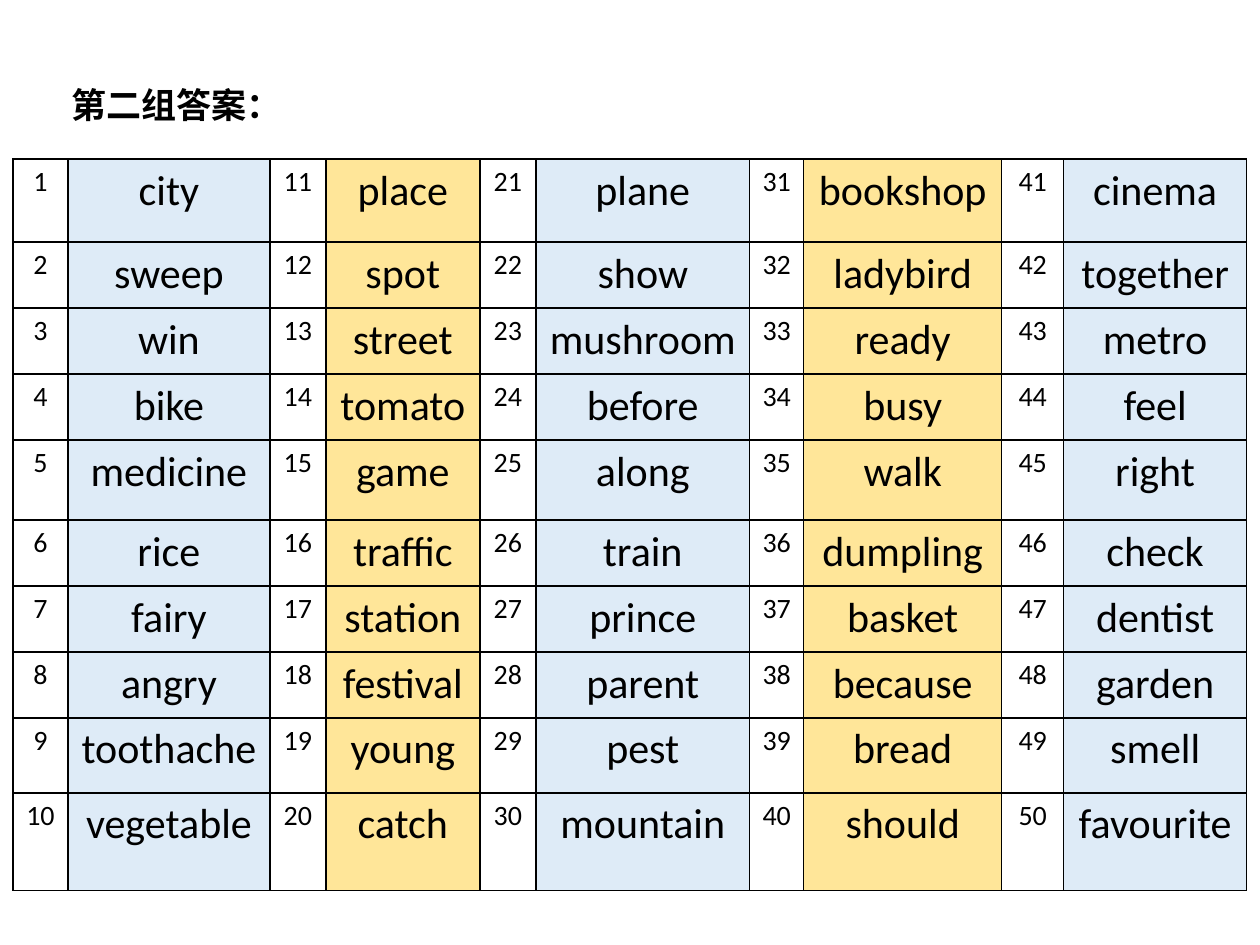
from dataclasses import dataclass

import lxml.etree
import pptx
import pptx.dml.color
import pptx.enum.text
import pptx.oxml.ns
import pptx.util

EMU_PER_PX = 914400 // 126


@dataclass(frozen=True)
class Theme:
    font: str = "Calibri"
    ink: str = "000000"
    blue: str = "DEEBF7"
    yellow: str = "FFE699"
    title_size: int = 20
    number_size: int = 16
    word_size: int = 24
    border_width: int = 1


# Word columns, read downwards; numbering runs through them in order
WORD_COLUMNS = [
    "city sweep win bike medicine rice fairy angry toothache vegetable".split(),
    "place spot street tomato game traffic station festival young catch".split(),
    "plane show mushroom before along train prince parent pest mountain".split(),
    "bookshop ladybird ready busy walk dumpling basket because bread should".split(),
    "cinema together metro feel right check dentist garden smell favourite".split(),
]
COLUMN_WIDTHS = [55, 202, 56, 154, 56, 214, 54, 198, 62, 183]
ROW_HEIGHTS = [83, 66, 66, 66, 80, 66, 66, 66, 75, 98]


def px(length):
    return pptx.util.Emu(length * EMU_PER_PX)


class PageBuilder:
    def __init__(self, page, theme):
        self.page = page
        self.theme = theme

    def color(self, value):
        return pptx.dml.color.RGBColor.from_string(value)

    def format_text(self, para, size, bold=False):
        for span in para.runs:
            span.font.name = self.theme.font
            span.font.size = pptx.util.Pt(size)
            span.font.bold = bold
            span.font.color.rgb = self.color(self.theme.ink)

    def title(self, text, left, top, width, height):
        box = self.page.shapes.add_textbox(px(left), px(top), px(width), px(height))
        frame = box.text_frame
        frame.word_wrap = True
        frame.auto_size = pptx.enum.text.MSO_AUTO_SIZE.SHAPE_TO_FIT_TEXT
        frame.text = text
        self.format_text(frame.paragraphs[0], self.theme.title_size, bold=True)

    def table(self, left, top, widths, heights):
        frame = self.page.shapes.add_table(
            len(heights), len(widths), px(left), px(top), px(sum(widths)), px(sum(heights)))
        table = frame.table
        table.first_row = False
        table.horz_banding = False
        for column, width in zip(table.columns, widths):
            column.width = px(width)
        for row, height in zip(table.rows, heights):
            row.height = px(height)
        return table

    def cell(self, cell, text, size, fill=None):
        cell.text_frame.text = text
        para = cell.text_frame.paragraphs[0]
        para.alignment = pptx.enum.text.PP_ALIGN.CENTER
        self.format_text(para, size)
        if fill:
            cell.fill.solid()
            cell.fill.fore_color.rgb = self.color(fill)
        else:
            cell.fill.background()
        self.borders(cell)

    def borders(self, cell):
        qn = pptx.oxml.ns.qn
        properties = cell._tc.get_or_add_tcPr()
        width = str(pptx.util.Pt(self.theme.border_width))
        # Border lines must come before the fill
        for position, side in enumerate(("a:lnL", "a:lnR", "a:lnT", "a:lnB")):
            line = lxml.etree.Element(qn(side), w=width)
            fill = lxml.etree.SubElement(line, qn("a:solidFill"))
            lxml.etree.SubElement(fill, qn("a:srgbClr"), val=self.theme.ink)
            properties.insert(position, line)


def main():
    deck = pptx.Presentation()
    deck.slide_width = px(1260)
    deck.slide_height = px(945)
    theme = Theme()
    builder = PageBuilder(deck.slides.add_slide(deck.slide_layouts[6]), theme)

    # Answer table: pairs of number and word columns
    table = builder.table(13, 159, COLUMN_WIDTHS, ROW_HEIGHTS)
    for group, words in enumerate(WORD_COLUMNS):
        fill = theme.yellow if group % 2 else theme.blue
        for row, word in enumerate(words):
            number = group * len(words) + row + 1
            builder.cell(table.cell(row, 2 * group), str(number), theme.number_size)
            builder.cell(table.cell(row, 2 * group + 1), word, theme.word_size, fill)

    # Heading
    builder.title("第二组答案：", 59, 77, 358, 54)

    deck.save("out.pptx")


if __name__ == "__main__":
    main()
